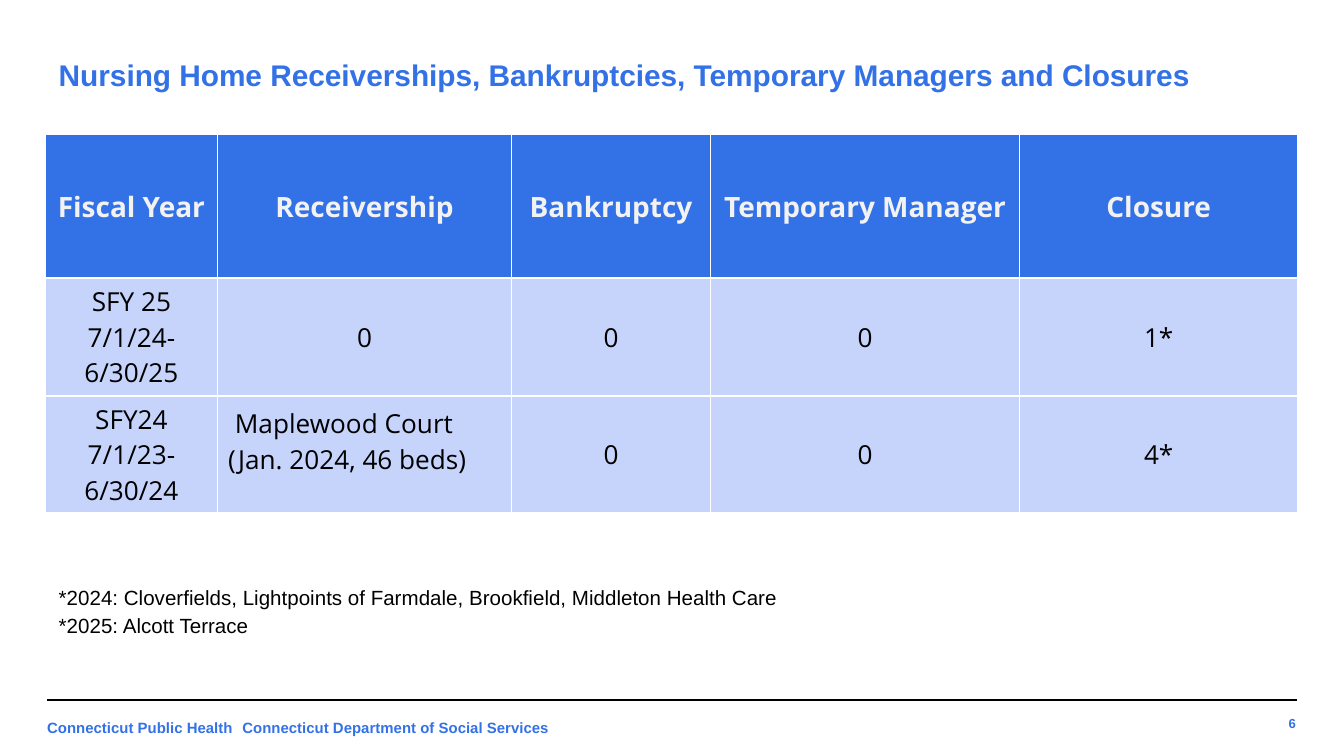
from dataclasses import dataclass

from lxml.etree import SubElement
from pptx import Presentation
from pptx.dml.color import RGBColor
from pptx.enum.shapes import MSO_CONNECTOR
from pptx.enum.text import MSO_ANCHOR, MSO_AUTO_SIZE, PP_ALIGN
from pptx.oxml.ns import qn
from pptx.util import Cm, Pt


@dataclass(frozen=True)
class Theme:
    blue: str = "3371E7"
    pale_blue: str = "C6D4FB"
    off_white: str = "F2F2F2"
    white: str = "FFFFFF"
    black: str = "000000"
    sans: str = "Arial"
    table_sans: str = "Open Sans"
    title_size: float = 16
    header_size: float = 15
    cell_size: float = 14
    note_size: float = 11
    footer_size: float = 8
    number_size: float = 7
    border: float = 1
    rule: float = 0.75


THEME = Theme()
LEFT, WIDTH = 0.86, 23.67
COLUMN_WIDTHS = [3.25, 5.56, 3.76, 5.84, 5.26]
ROW_HEIGHTS = [2.72, 2.21, 2.21]
ROWS = [
    ["Fiscal Year", "Receivership", "Bankruptcy", "Temporary Manager", "Closure"],
    ["SFY 25\n7/1/24-6/30/25", "0", "0", "0", "1*"],
    ["SFY24\n7/1/23-6/30/24", " Maplewood Court\n(Jan. 2024, 46 beds)", "0", "0", "4*"],
]
NOTES = (
    "*2024: Cloverfields, Lightpoints of Farmdale, Brookfield, Middleton Health Care\n"
    "*2025: Alcott Terrace"
)


def set_attributes(target, values):
    for name, value in values.items():
        setattr(target, name, value)


def font_format(size, color, bold=True, name=THEME.sans):
    return {"size": Pt(size), "color": color, "bold": bold, "name": name}


def write_text(frame, text, font, paragraph=None):
    """Fill a frame with one formatted paragraph per line of text."""
    frame.text = text
    for para in frame.paragraphs:
        set_attributes(para, paragraph or {})
        for span in para.runs:
            set_attributes(span.font, {k: v for k, v in font.items() if k != "color"})
            span.font.color.rgb = RGBColor.from_string(font["color"])


def place(shape, left, top, width, height):
    edges = {"left": left, "top": top, "width": width, "height": height}
    set_attributes(shape, {name: Cm(value) for name, value in edges.items()})


def set_frame(frame, anchor=MSO_ANCHOR.TOP, inset=0.25, wrap=True):
    sides = ("left", "top", "right", "bottom")
    set_attributes(frame, {f"margin_{side}": Cm(inset) for side in sides})
    set_attributes(frame, {
        "word_wrap": wrap,
        "auto_size": MSO_AUTO_SIZE.NONE,
        "vertical_anchor": anchor,
    })


def fill_title(slide):
    title = slide.shapes.title
    place(title, LEFT, 0.64, WIDTH, 1.55)
    set_frame(title.text_frame, MSO_ANCHOR.MIDDLE)
    write_text(
        title.text_frame,
        "Nursing Home Receiverships, Bankruptcies, Temporary Managers and Closures",
        font_format(THEME.title_size, THEME.blue),
        {"alignment": PP_ALIGN.LEFT},
    )


def fill_notes(slide):
    body = slide.placeholders[1]
    place(body, LEFT, 10.74, WIDTH, 1.78)
    set_frame(body.text_frame)
    write_text(
        body.text_frame,
        NOTES,
        font_format(THEME.note_size, THEME.black, bold=False),
        {"line_spacing": 1.15, "space_before": Pt(0)},
    )
    for para in body.text_frame.paragraphs:
        properties = para._p.get_or_add_pPr()
        properties.set("marL", "0")
        properties.set("indent", "0")
        SubElement(properties, qn("a:buNone"))


def add_borders(cell, sides):
    """Draw white cell borders; call before the cell gets its fill."""
    properties = cell._tc.get_or_add_tcPr()
    for side in sides:
        line = SubElement(properties, qn(f"a:ln{side}"), w=str(Pt(THEME.border)))
        fill = SubElement(line, qn("a:solidFill"))
        SubElement(fill, qn("a:srgbClr"), val=THEME.white)


def format_cell(cell, text, is_header):
    add_borders(cell, "LRTB")
    cell.fill.solid()
    fill_color = THEME.blue if is_header else THEME.pale_blue
    cell.fill.fore_color.rgb = RGBColor.from_string(fill_color)
    set_attributes(cell, {
        "vertical_anchor": MSO_ANCHOR.MIDDLE,
        "margin_left": Cm(0.2),
        "margin_right": Cm(0.2),
        "margin_top": Cm(0.1),
        "margin_bottom": Cm(0.1),
    })
    size = THEME.header_size if is_header else THEME.cell_size
    color = THEME.off_white if is_header else THEME.black
    font = font_format(size, color, is_header, THEME.table_sans)
    write_text(cell.text_frame, text, font, {"alignment": PP_ALIGN.CENTER})


def add_status_table(slide):
    frame = slide.shapes.add_table(
        len(ROWS), len(COLUMN_WIDTHS),
        Cm(LEFT), Cm(2.54), Cm(WIDTH), Cm(sum(ROW_HEIGHTS)),
    )
    table = frame.table
    for column, width in zip(table.columns, COLUMN_WIDTHS):
        column.width = Cm(width)
    for row_index, (height, texts) in enumerate(zip(ROW_HEIGHTS, ROWS)):
        table.rows[row_index].height = Cm(height)
        for column_index, text in enumerate(texts):
            format_cell(table.cell(row_index, column_index), text, row_index == 0)

    receivership = table.cell(2, 1)
    receivership.margin_bottom = Cm(0.6)
    for para in receivership.text_frame.paragraphs:
        para.alignment = PP_ALIGN.LEFT


def add_label(slide, text, box, size=THEME.footer_size, alignment=PP_ALIGN.LEFT, **frame):
    label = slide.shapes.add_textbox(*map(Cm, box))
    set_frame(label.text_frame, **frame)
    write_text(label.text_frame, text, font_format(size, THEME.blue), {"alignment": alignment})


def add_rule(slide):
    rule = slide.shapes.add_connector(
        MSO_CONNECTOR.STRAIGHT, Cm(24.51), Cm(13.23), Cm(0.89), Cm(13.23)
    )
    rule.line.width = Pt(THEME.rule)
    rule.line.color.rgb = RGBColor.from_string(THEME.black)
    SubElement(rule._element.spPr, qn("a:effectLst"))


def add_footer(slide):
    add_rule(slide)
    add_label(slide, "Connecticut Public Health", (0.64, 13.34, 8.33, 0.86))
    add_label(slide, "Connecticut Department of Social Services",
              (4.45, 13.46, 6.38, 0.61), inset=0.13, wrap=False)
    add_label(slide, "6", (23.22, 13.36, 1.52, 0.64), THEME.number_size,
              PP_ALIGN.RIGHT, anchor=MSO_ANCHOR.MIDDLE)


def main():
    deck = Presentation()
    deck.slide_width, deck.slide_height = Cm(25.4), Cm(14.29)
    page = deck.slides.add_slide(deck.slide_layouts[1])
    fill_title(page)
    fill_notes(page)
    add_status_table(page)
    add_footer(page)
    deck.save("out.pptx")


if __name__ == "__main__":
    main()
